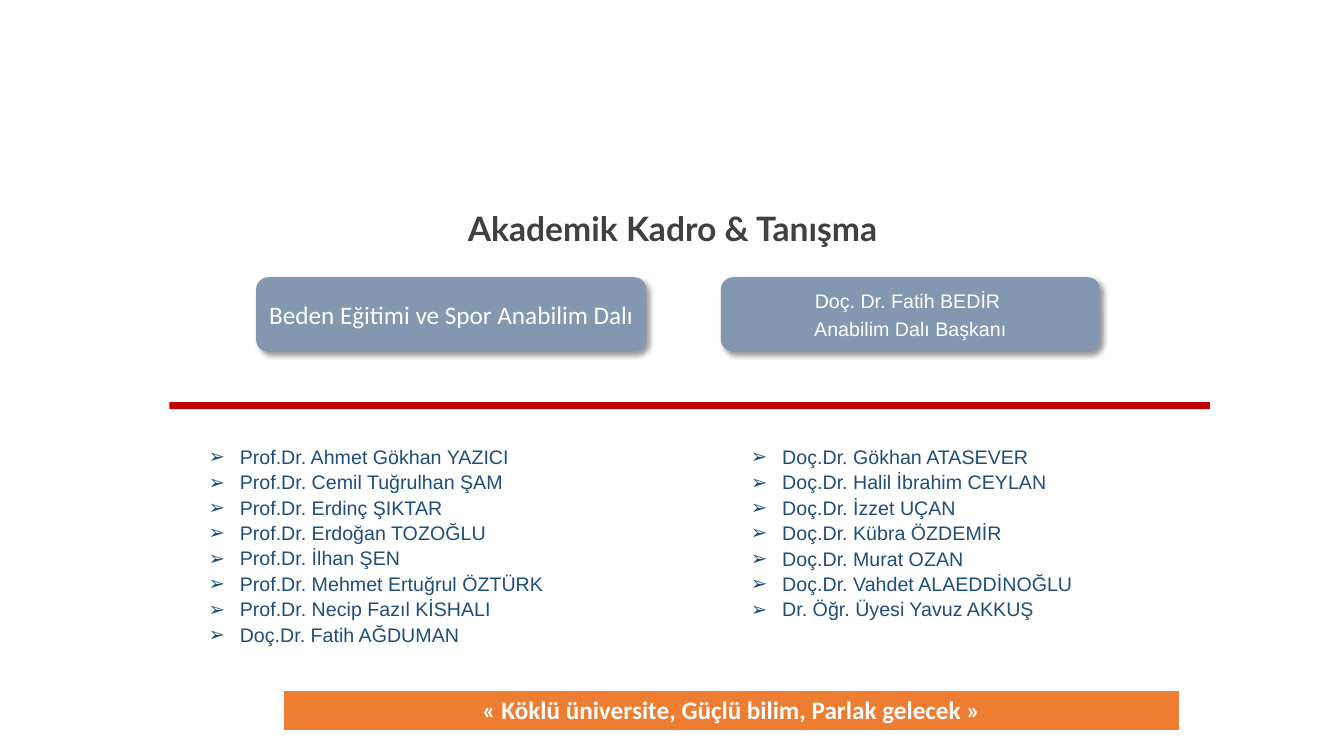
from dataclasses import dataclass

from lxml.etree import SubElement
from pptx import Presentation
from pptx.dml.color import RGBColor
from pptx.enum.shapes import MSO_SHAPE
from pptx.enum.text import MSO_ANCHOR, PP_ALIGN
from pptx.oxml.ns import qn
from pptx.util import Inches, Pt

TITLE = "Akademik Kadro & Tanışma"
MOTTO = "« Köklü üniversite, Güçlü bilim, Parlak gelecek »"
CARDS = [
    {"left": 2.54, "width": 3.87, "font": "Calibri", "size": 18,
     "lines": ["Beden Eğitimi ve Spor Anabilim Dalı"]},
    {"left": 7.15, "width": 3.76, "font": "Arial", "size": 14,
     "lines": ["Doç. Dr. Fatih BEDİR ", "Anabilim Dalı Başkanı"]},
]
STAFF = [
    {"left": 1.97, "height": 2.6, "names": [
        "Prof.Dr. Ahmet Gökhan YAZICI",
        "Prof.Dr. Cemil Tuğrulhan ŞAM",
        "Prof.Dr. Erdinç ŞIKTAR",
        "Prof.Dr. Erdoğan TOZOĞLU",
        "Prof.Dr. İlhan ŞEN",
        "Prof.Dr. Mehmet Ertuğrul ÖZTÜRK",
        "Prof.Dr. Necip Fazıl KİSHALI",
        "Doç.Dr. Fatih AĞDUMAN",
    ]},
    {"left": 7.35, "height": 2.09, "names": [
        "Doç.Dr. Gökhan ATASEVER",
        "Doç.Dr. Halil İbrahim CEYLAN",
        "Doç.Dr. İzzet UÇAN",
        "Doç.Dr. Kübra ÖZDEMİR",
        "Doç.Dr. Murat OZAN",
        "Doç.Dr. Vahdet ALAEDDİNOĞLU",
        "Dr. Öğr. Üyesi Yavuz AKKUŞ",
    ]},
]


@dataclass(frozen=True)
class Theme:
    title: str = "404041"
    card: str = "8497B0"
    rule: str = "C00000"
    staff: str = "1F4E79"
    motto: str = "ED7D31"
    white: str = "FFFFFF"
    shadow: str = "000000"
    title_size: int = 24
    motto_size: int = 18
    staff_size: int = 14


THEME = Theme()


def area(left, top, width, height):
    return [Inches(value) for value in (left, top, width, height)]


def style(para, name, size, color, bold=False):
    para.font.name = name
    para.font.size = Pt(size)
    para.font.bold = bold
    para.font.color.rgb = RGBColor.from_string(color)


def write_lines(frame, lines):
    frame.word_wrap = True
    frame.text = "\n".join(lines)
    return frame.paragraphs


def add_block(page, kind, place, color):
    block = page.shapes.add_shape(kind, *area(*place))
    block.shadow.inherit = False
    block.fill.solid()
    block.fill.fore_color.rgb = RGBColor.from_string(color)
    block.line.fill.background()
    return block


def add_color(parent, color):
    return SubElement(parent, qn("a:srgbClr"), val=color)


def cast_shadow(block):
    effects = block._element.spPr.find(qn("a:effectLst"))
    shadow = SubElement(effects, qn("a:outerShdw"), blurRad=str(Pt(4)),
                        dist=str(Pt(3)), dir=str(45 * 60000), algn="tl", rotWithShape="0")
    SubElement(add_color(shadow, THEME.shadow), qn("a:alpha"), val="40000")


def add_bullet(para):
    properties = para._p.get_or_add_pPr()
    properties.set("marL", str(Inches(0.31)))
    properties.set("indent", str(Inches(-0.31)))
    SubElement(properties, qn("a:buFont"), typeface="Arial")
    SubElement(properties, qn("a:buChar"), char="➢")


def add_title(page):
    box = page.shapes.add_textbox(*area(1.97, 1.94, 9.4, 0.64))
    box.text_frame.vertical_anchor = MSO_ANCHOR.MIDDLE
    para = write_lines(box.text_frame, [TITLE])[0]
    para.alignment = PP_ALIGN.CENTER
    style(para, "Lato", THEME.title_size, THEME.title, True)


def add_motto(page):
    table = page.shapes.add_table(1, 1, *area(2.81, 6.85, 8.89, 0.41)).table
    cell = table.cell(0, 0)
    para = write_lines(cell.text_frame, [MOTTO])[0]
    para.alignment = PP_ALIGN.CENTER
    style(para, "Calibri", THEME.motto_size, THEME.white, True)
    properties = cell._tc.get_or_add_tcPr()
    for side, width in (("L", 1), ("R", 1), ("T", 1), ("B", 3)):
        border = SubElement(properties, qn(f"a:ln{side}"), w=str(Pt(width)))
        add_color(SubElement(border, qn("a:solidFill")), THEME.white)
    cell.fill.solid()
    cell.fill.fore_color.rgb = RGBColor.from_string(THEME.motto)


def add_card(page, card):
    place = (card["left"], 2.75, card["width"], 0.74)
    block = add_block(page, MSO_SHAPE.ROUNDED_RECTANGLE, place, THEME.card)
    cast_shadow(block)
    frame = block.text_frame
    frame.vertical_anchor = MSO_ANCHOR.MIDDLE
    frame.margin_left = frame.margin_right = Inches(0.04)
    frame.margin_top = frame.margin_bottom = Inches(0.04)
    for para in write_lines(frame, card["lines"]):
        para.alignment = PP_ALIGN.CENTER
        para.space_after = Pt(3)
        style(para, card["font"], card["size"], THEME.white)


def add_staff(page, column):
    box = page.shapes.add_textbox(*area(column["left"], 4.39, 4.12, column["height"]))
    for para in write_lines(box.text_frame, column["names"]):
        para.line_spacing = 0.9
        para.space_after = Pt(3)
        add_bullet(para)
        style(para, "Arial", THEME.staff_size, THEME.staff)


def main():
    deck = Presentation()
    deck.slide_width, deck.slide_height = Inches(13.33), Inches(7.5)
    page = deck.slides.add_slide(deck.slide_layouts[6])
    add_title(page)
    add_motto(page)
    for card in CARDS:
        add_card(page, card)
    add_block(page, MSO_SHAPE.RECTANGLE, (1.68, 3.99, 10.32, 0.07), THEME.rule)
    for column in STAFF:
        add_staff(page, column)
    deck.save("out.pptx")


if __name__ == "__main__":
    main()
